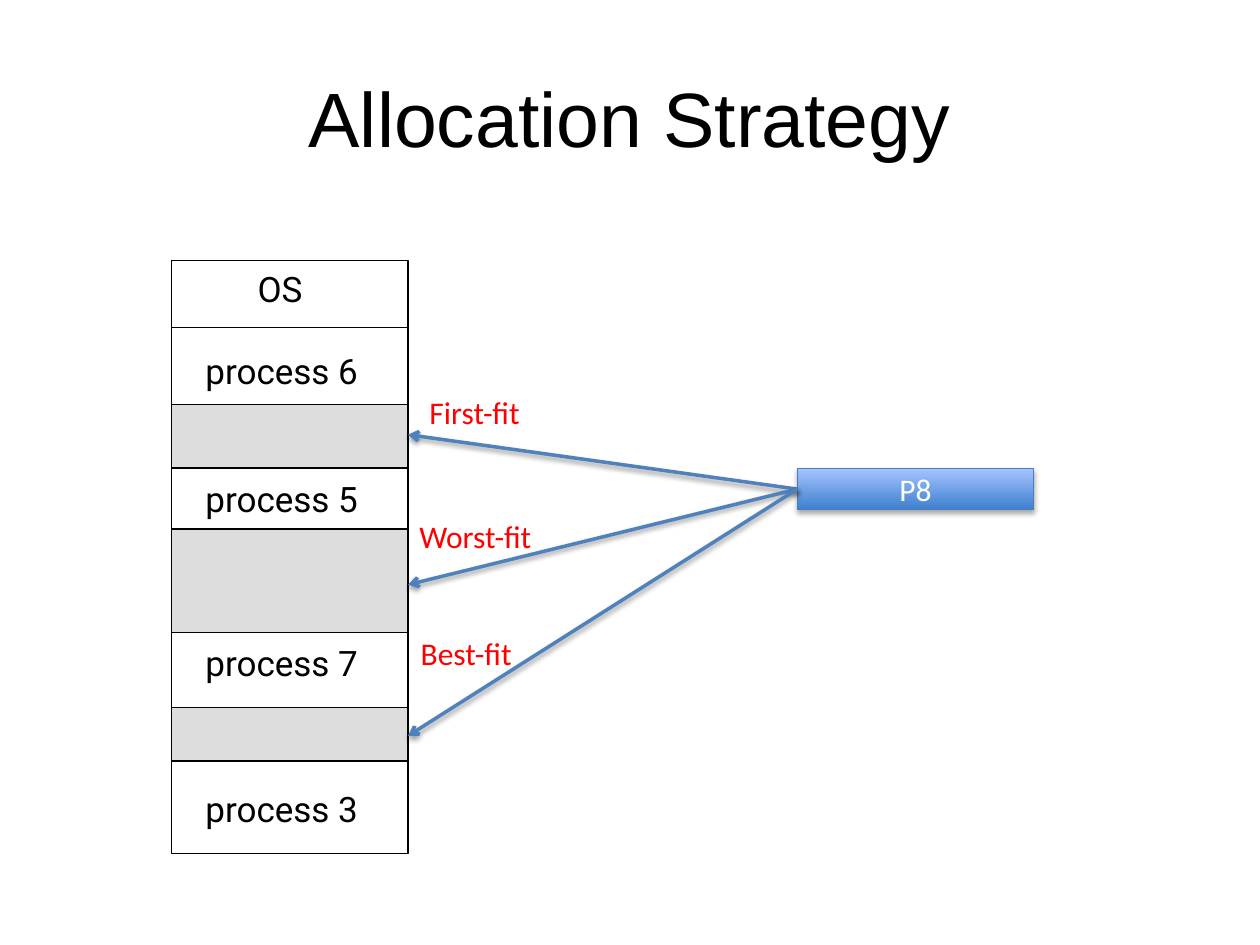
from dataclasses import dataclass

from lxml.etree import SubElement
from pptx import Presentation
from pptx.dml.color import RGBColor
from pptx.enum.shapes import MSO_CONNECTOR as Connector, MSO_SHAPE as Preset
from pptx.enum.text import MSO_ANCHOR as Anchor, MSO_AUTO_SIZE as AutoSize, PP_ALIGN as Align
from pptx.oxml.ns import qn
from pptx.util import Pt


@dataclass(frozen=True)
class Theme:
    black: str = "000000"
    white: str = "FFFFFF"
    hole: str = "DDDDDD"
    label: str = "FF0000"
    arrow: str = "4F81BD"
    edge: str = "4B7EBC"
    gradient: tuple = ("3F80CE", "A4C4FF")
    title_size: int = 44
    process_size: int = 20
    label_size: int = 18
    title_font: str = "Arial"
    process_font: str = "Roboto"
    label_font: str = "Calibri"


def rgb(value):
    return RGBColor.from_string(value)


def write(frame, text, *, size, font, color, align=Align.CENTER, anchor=Anchor.MIDDLE,
          insets=(7.2, 3.6), wrap=True, grow=False):
    frame.word_wrap = wrap
    frame.auto_size = AutoSize.SHAPE_TO_FIT_TEXT if grow else AutoSize.NONE
    frame.vertical_anchor = anchor
    frame.margin_left = frame.margin_right = Pt(insets[0])
    frame.margin_top = frame.margin_bottom = Pt(insets[1])
    para = frame.paragraphs[0]
    para.alignment = align
    span = para.add_run()
    span.text = text
    span.font.size = Pt(size)
    span.font.name = font
    span.font.color.rgb = rgb(color)


def set_shadow(item, opacity=0, blur=0, distance=0):
    effects = SubElement(item._element.spPr, qn("a:effectLst"))
    if opacity:
        shadow = SubElement(effects, qn("a:outerShdw"), blurRad=str(Pt(blur)),
                            dist=str(Pt(distance)), dir="5400000", rotWithShape="0")
        color = SubElement(shadow, qn("a:srgbClr"), val="000000")
        SubElement(color, qn("a:alpha"), val=str(opacity * 1000))


class SlideBuilder:
    """Draws themed elements on one slide, with all lengths in points."""

    def __init__(self, page, theme):
        self.page = page
        self.theme = theme

    def text(self, text, bounds, **style):
        box = self.page.shapes.add_textbox(*map(Pt, bounds))
        write(box.text_frame, text, **style)

    def rectangle(self, bounds, fill, edge, shadow=()):
        box = self.page.shapes.add_shape(Preset.RECTANGLE, *map(Pt, bounds))
        if isinstance(fill, tuple):
            box.fill.gradient()
            box.fill.gradient_angle = 90
            for stop, color, position in zip(box.fill.gradient_stops, fill, (0, 1)):
                stop.color.rgb = rgb(color)
                stop.position = position
        else:
            box.fill.solid()
            box.fill.fore_color.rgb = rgb(fill)
        box.line.color.rgb = rgb(edge)
        box.line.width = Pt(0.75)
        set_shadow(box, *shadow)
        return box

    def line(self, start, end, color, width, arrow=False, shadow=()):
        line = self.page.shapes.add_connector(Connector.STRAIGHT, *map(Pt, start + end))
        line.line.color.rgb = rgb(color)
        line.line.width = Pt(width)
        if arrow:
            SubElement(line.line._get_or_add_ln(), qn("a:tailEnd"), type="arrow")
        set_shadow(line, *shadow)

    def process(self, text, left, top, width, wrap=True):
        theme = self.theme
        self.text(text, (left, top, width, 34.3), size=theme.process_size,
                  font=theme.process_font, color=theme.black, insets=(10, 5),
                  wrap=wrap, grow=True)

    def label(self, text, left, top, width):
        theme = self.theme
        self.text(text, (left, top, width, 29), size=theme.label_size,
                  font=theme.label_font, color=theme.label, align=Align.LEFT,
                  anchor=Anchor.TOP, wrap=False, grow=True)


def main():
    deck = Presentation()
    deck.slide_width, deck.slide_height = Pt(720), Pt(540)
    theme = Theme()
    page = deck.slides.add_slide(deck.slide_layouts[6])
    slide = SlideBuilder(page, theme)

    slide.text("Allocation Strategy", (36, 21.6, 648, 90), size=theme.title_size,
               font=theme.title_font, color=theme.black)

    left, width = 98, 135.2
    right = left + width
    slide.rectangle((left, 149, width, 338.6), theme.white, theme.black)
    slide.line((left, 187), (right, 187), theme.black, 0.75)
    for top, height in ((231, 36.5), (302.3, 59), (404.2, 30.7)):
        slide.rectangle((left, top, width, height), theme.hole, theme.black)

    slide.process("OS", 135.2, 147.8, 49.7, wrap=False)
    for number, top in ((6, 194.6), (5, 267.8), (7, 361.6), (3, 445)):
        slide.process(f"process {number}", left, top, 126)

    request_left, request_top, request_height = 455.6, 267.8, 23.4
    request = slide.rectangle((request_left, request_top, width, request_height),
                              theme.gradient, theme.edge, shadow=(35, 3.1, 1.8))
    write(request.text_frame, "P8", size=theme.label_size, font=theme.label_font,
          color=theme.white)

    start = (request_left, request_top + request_height / 2)
    strategies = (
        ("First-fit", 248.4, 238.3, 221, 68.4),
        ("Worst-fit", 334.1, 232.6, 291.6, 81.4),
        ("Best-fit", 420.5, 233.3, 358.6, 68.4),
    )
    for name, target, label_left, label_top, label_width in strategies:
        slide.line(start, (right, target), theme.arrow, 2, arrow=True, shadow=(38, 3.1, 1.6))
        slide.label(name, label_left, label_top, label_width)

    deck.save("out.pptx")


if __name__ == "__main__":
    main()
